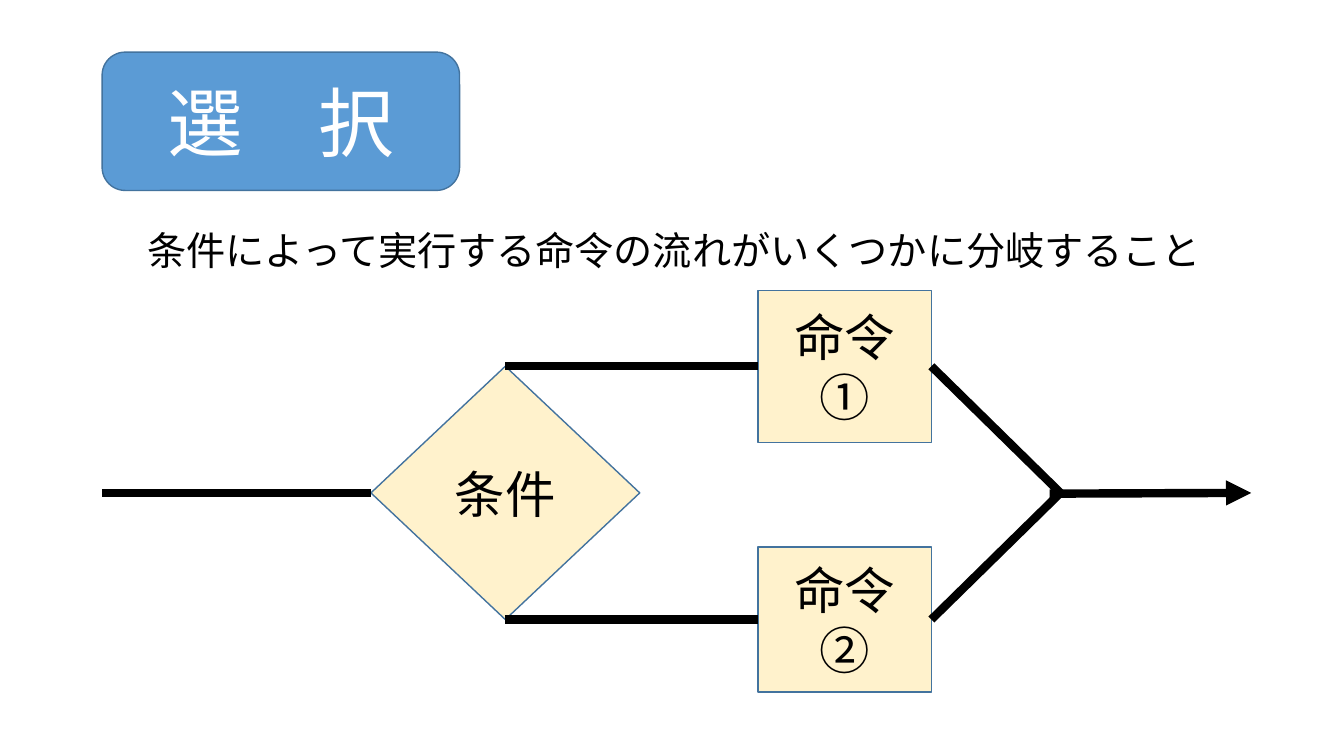
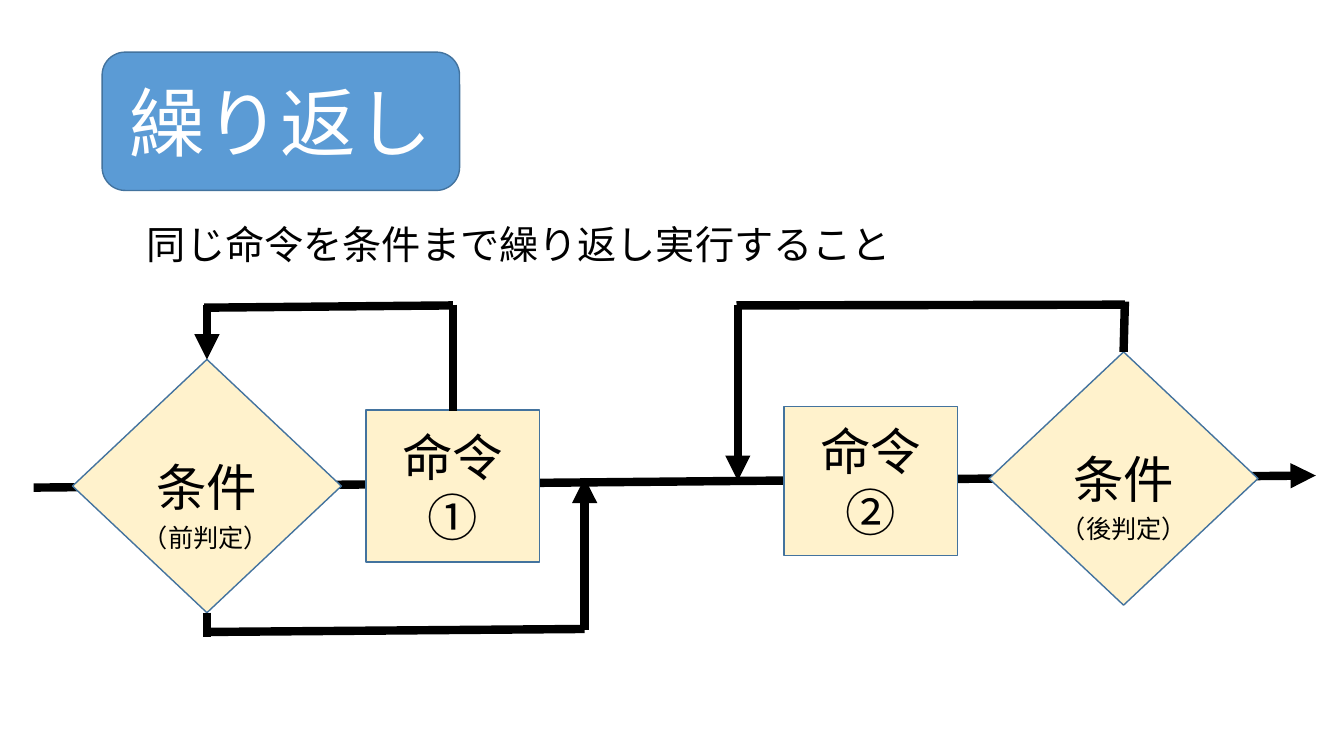
import pptx
import pptx.util
import pptx.dml.color
import pptx.enum.shapes
import pptx.enum.text
import pptx.oxml.ns
import lxml.etree

WIDE, HIGH = 13.33, 7.5
FONT = "Noto Sans CJK JP"
BLUE, EDGE, CREAM = "5B9BD5", "43739E", "FFF2CC"
BLACK, WHITE = "000000", "FFFFFF"
KIND = pptx.enum.shapes.MSO_SHAPE
COND_W, COND_H = 20, 33.5
CMD_W = 12.9


def col(share):
    """Percent of the slide's width as a length."""
    return pptx.util.Inches(WIDE * share / 100)


def row(share):
    """Percent of the slide's height as a length."""
    return pptx.util.Inches(HIGH * share / 100)


def rgb(code):
    return pptx.dml.color.RGBColor.from_string(code)


def child(parent, tag, **attrs):
    return lxml.etree.SubElement(parent, pptx.oxml.ns.qn(tag), **attrs)


def write(frame, text, size, color, align):
    """Fill a text frame, one paragraph to each line of text."""
    frame.text = text
    for para in frame.paragraphs:
        para.alignment = align
        font = para.font
        font.size = pptx.util.Pt(size)
        font.color.rgb = rgb(color)
        font.name = FONT
        props = para._p.pPr.find(pptx.oxml.ns.qn("a:defRPr"))
        child(props, "a:ea", typeface=FONT)


def block(slide, kind, x, y, w, h, text, size, fill=CREAM, color=BLACK):
    """Add a filled shape centred on x, y."""
    shape = slide.shapes.add_shape(
        kind, col(x - w / 2), row(y - h / 2), col(w), row(h))
    shape.shadow.inherit = False
    shape.fill.solid()
    shape.fill.fore_color.rgb = rgb(fill)
    shape.line.color.rgb = rgb(EDGE)
    shape.line.width = pptx.util.Pt(1)
    frame = shape.text_frame
    frame.word_wrap = True
    frame.vertical_anchor = pptx.enum.text.MSO_ANCHOR.MIDDLE
    write(frame, text, size, color, pptx.enum.text.PP_ALIGN.CENTER)


def command(slide, x, y, h, mark):
    block(slide, KIND.FLOWCHART_PROCESS, x, y, CMD_W, h, "命令\n" + mark, 36)


def choice(slide, x, y):
    block(slide, KIND.FLOWCHART_DECISION, x, y, COND_W, COND_H, "条件", 36)


def label(slide, x, y, w, h, text, size):
    frame = slide.shapes.add_textbox(col(x), row(y), col(w), row(h)).text_frame
    frame.word_wrap = False
    frame.auto_size = pptx.enum.text.MSO_AUTO_SIZE.SHAPE_TO_FIT_TEXT
    write(frame, text, size, BLACK, pptx.enum.text.PP_ALIGN.LEFT)


def flow(slide, x1, y1, x2, y2, arrow=False):
    """Draw a thick flow line, with an arrowhead at its end if asked."""
    line = slide.shapes.add_connector(
        pptx.enum.shapes.MSO_CONNECTOR.STRAIGHT,
        col(x1), row(y1), col(x2), row(y2))
    line.line.color.rgb = rgb(BLACK)
    line.line.width = pptx.util.Pt(6)
    if arrow:
        child(line.line._get_or_add_ln(), "a:tailEnd", type="triangle")
    child(line._element.spPr, "a:effectLst")


def start(deck, title, lead, y, w):
    """Add a slide with its title plate and lead sentence."""
    slide = deck.slides.add_slide(deck.slide_layouts[6])
    block(slide, KIND.ROUNDED_RECTANGLE, 20.9, 16.05, 26.6, 18.3,
          title, 54, BLUE, WHITE)
    label(slide, 10.2, y, w, 7.6, lead, 28)
    return slide


def branch(deck):
    slide = start(deck, "選　択",
                  "条件によって実行する命令の流れがいくつかに分岐すること", 29.3, 81)
    fork, mid, cmd, join = 37.6, 65.2, 62.85, 78.9
    top, low = mid - COND_H / 2, mid + COND_H / 2
    choice(slide, fork, mid)
    for y, h, mark in ((top, 20.1, "①"), (low, 19.2, "②")):
        command(slide, cmd, y, h, mark)
        flow(slide, fork, y, cmd - CMD_W / 2, y)
        flow(slide, join, mid, cmd + CMD_W / 2, y)
    flow(slide, 7.6, mid, fork - COND_W / 2, mid)
    flow(slide, join - 0.8, mid + 0.1, 93.1, mid, True)


def repeat(deck):
    slide = start(deck, "繰り返し",
                  "同じ命令を条件まで繰り返し実行すること", 28.5, 57.5)
    pre, first, skip, back, second, post = 15.4, 33.7, 43.5, 54.9, 64.8, 83.6
    left, right = 64.3, 63.3
    roof, base = 40.3, 83.3
    flow(slide, 2.5, 64.5, 97.9, 62.9, True)
    command(slide, first, left, 20.1, "①")
    command(slide, second, 63.6, 19.7, "②")
    choice(slide, pre, left)
    choice(slide, post, right)

    flow(slide, first, roof, first, left - 10)
    flow(slide, first, roof + 0.1, pre - 0.2, roof + 0.4)
    flow(slide, pre, roof, pre, left - COND_H / 2, True)

    flow(slide, post + 0.1, roof, back - 0.1, roof + 0.1)
    flow(slide, post + 0.1, roof - 0.4, post, right - COND_H / 2)
    flow(slide, back, roof, back, 63.6, True)

    flow(slide, pre, left + COND_H / 2, pre, base + 1)
    flow(slide, skip, base - 0.1, pre - 0.2, base + 0.3)
    flow(slide, skip, base, skip, 63.2, True)

    label(slide, 9.9, 68.5, 10.95, 5.3, "（前判定）", 18)
    label(slide, 78.2, 67.2, 10.95, 5.3, "（後判定）", 18)


def main():
    deck = pptx.Presentation()
    deck.slide_width, deck.slide_height = col(100), row(100)
    branch(deck)
    repeat(deck)
    deck.save("out.pptx")


if __name__ == "__main__":
    main()
